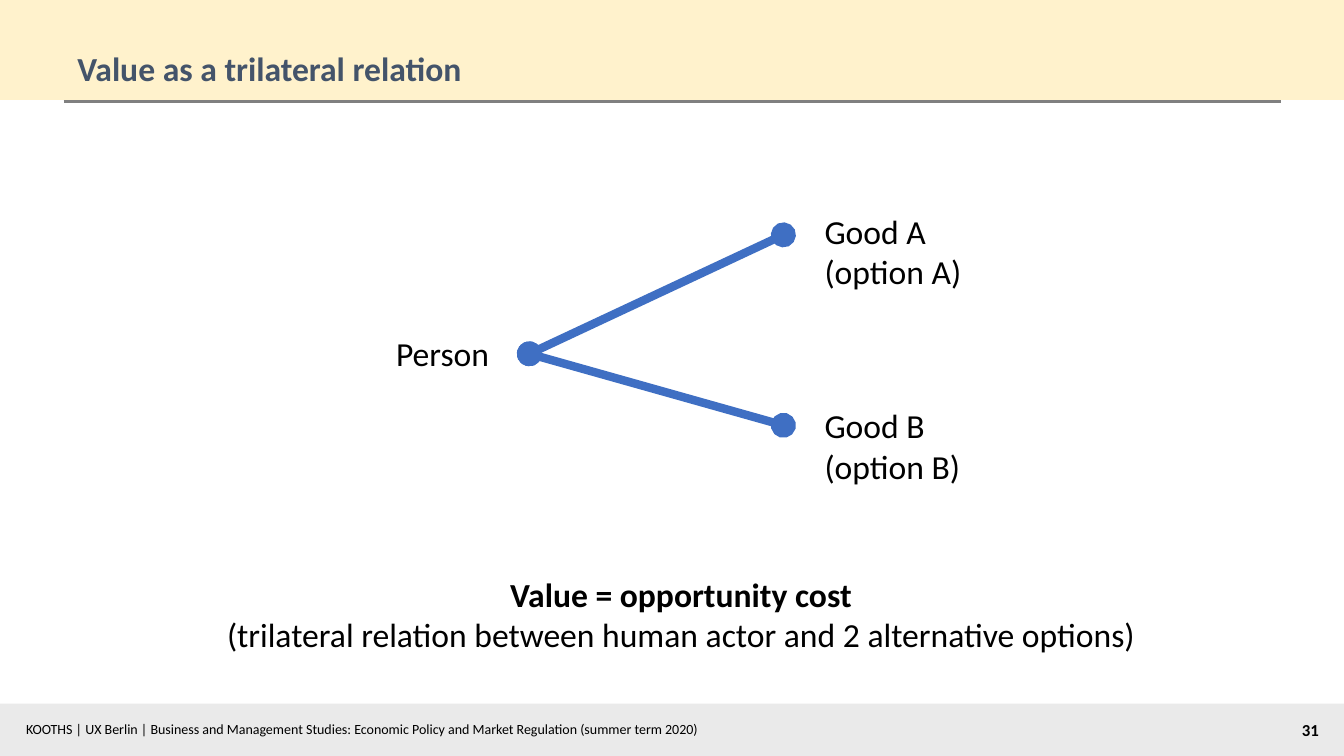
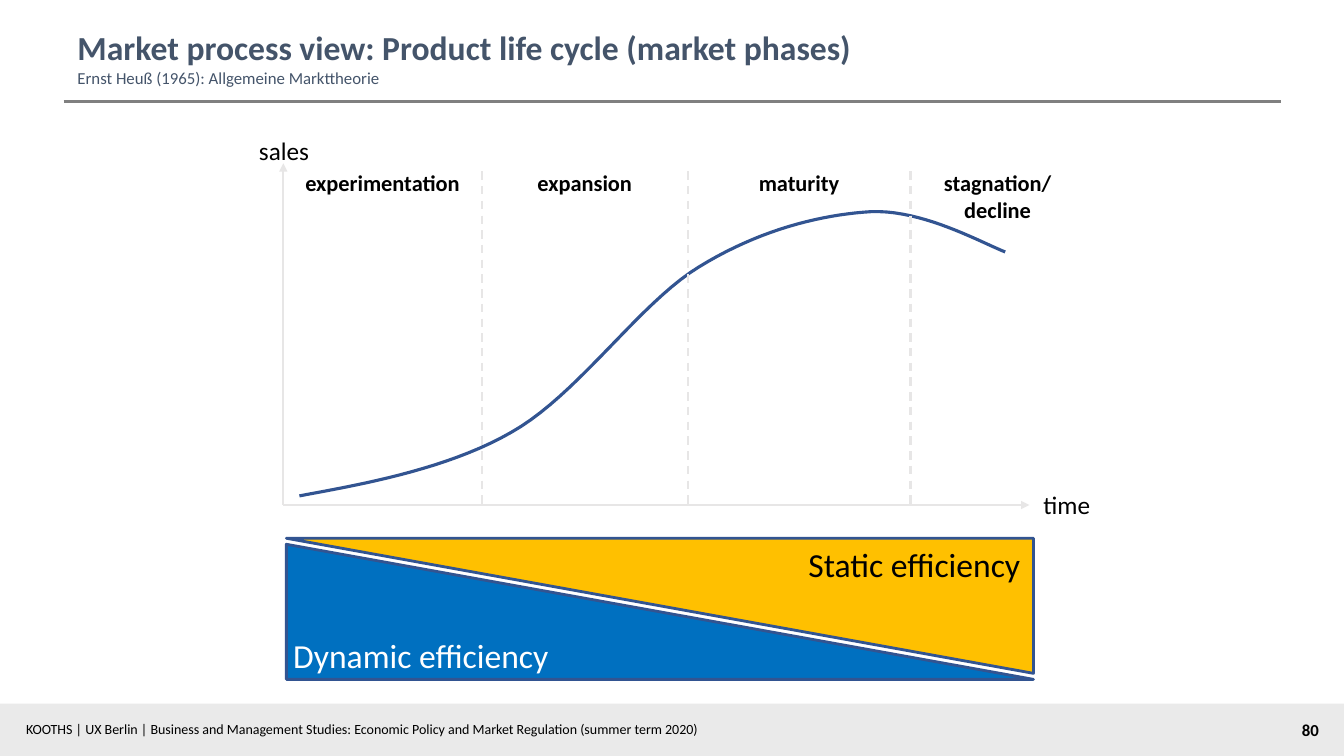
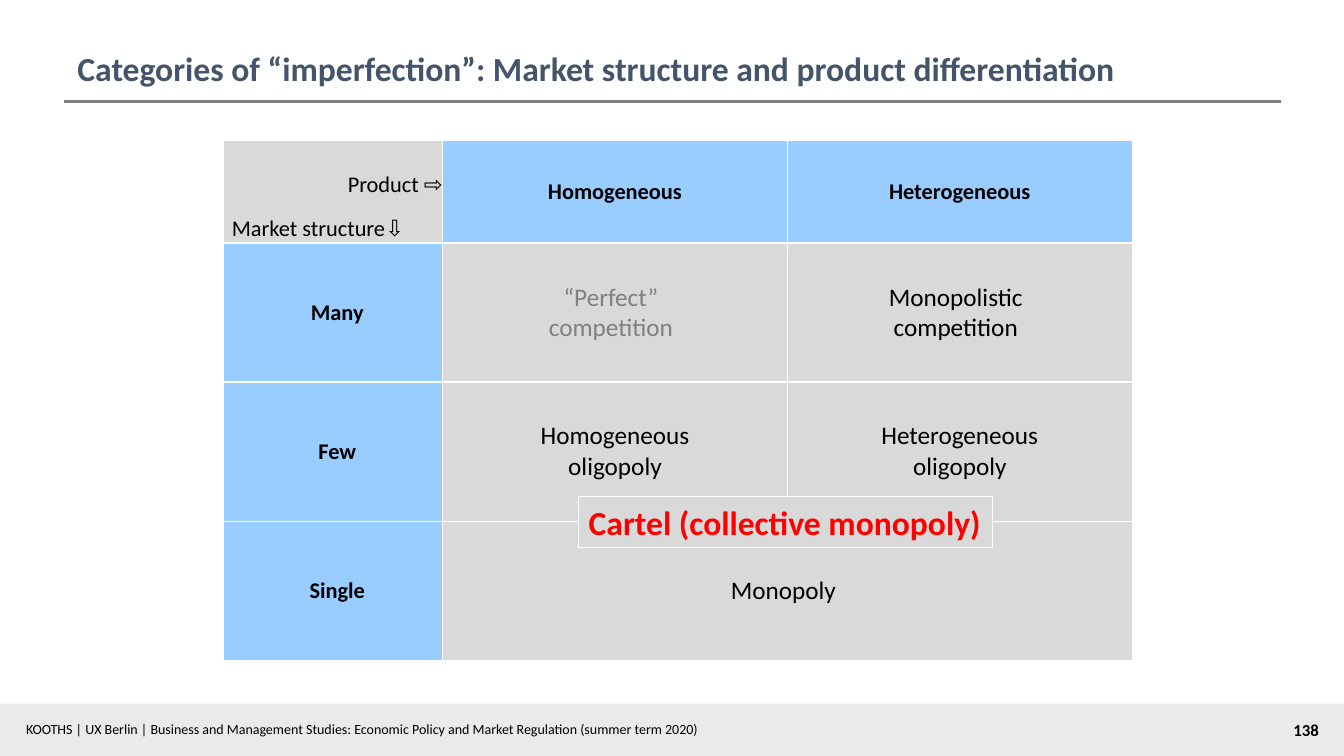
from itertools import pairwise

from lxml.etree import SubElement
from pptx import Presentation
from pptx.dml.color import RGBColor
from pptx.enum.dml import MSO_LINE
from pptx.enum.shapes import MSO_CONNECTOR, MSO_SHAPE
from pptx.enum.text import MSO_ANCHOR, PP_ALIGN
from pptx.oxml.ns import qn
from pptx.util import Inches, Pt

FONT = "Calibri"
COLORS = {
    "text": "000000", "white": "FFFFFF", "title": "44546A", "rule": "808080",
    "footer": "EAEAEA", "band": "FFF2CC", "relation": "3F6FC3", "axis": "E7E6E6",
    "curve": "325491", "dynamic": "0070C0", "static": "FFC000",
    "head": "99CCFF", "body": "D9D9D9", "muted": "808080", "alert": "FF0000",
}
LEFT, CENTER, RIGHT = PP_ALIGN.LEFT, PP_ALIGN.CENTER, PP_ALIGN.RIGHT
WIDTH, HEIGHT = 13.33, 7.5
FOOTER = ("KOOTHS | UX Berlin | Business and Management Studies: "
          "Economic Policy and Market Regulation (summer term 2020)")

# Trilateral relation
PERSON = (5.25, 3.51)
GOODS = [(7.77, 2.33), (7.77, 4.22)]
RELATION_LABELS = [
    ("Person", (3.83, 3.25, 1.13, 0.5)),
    ("Good A\n(option A)", (8.08, 2.04, 1.57, 0.91)),
    ("Good B\n(option B)", (8.08, 3.97, 1.56, 0.91)),
]
VALUE_RUNS = [
    ("Value = opportunity cost\n", {"bold": True}),
    ("(trilateral relation between human actor and 2 alternative options)", {}),
]

# Product life cycle
ORIGIN, TIME_END, SALES_END = (2.81, 5.01), (10.21, 5.01), (2.81, 1.62)
PHASES = ["experimentation", "expansion", "maturity", "stagnation/\ndecline"]
PHASE_EDGES = [2.81, 4.78, 6.82, 9.03, 10.76]
CURVE_START = (2.97, 4.92)
CURVE = [  # two control points and an end point for each Bézier segment
    ((3.5, 4.82), (4.41, 4.67), (5.07, 4.29)),
    ((5.73, 3.92), (6.34, 3.01), (6.93, 2.65)),
    ((7.53, 2.28), (8.14, 2.13), (8.64, 2.1)),
    ((9.15, 2.08), (9.72, 2.4), (9.97, 2.5)),
]
AXIS_LABELS = [("time", (10.25, 4.81, 0.68, 0.4)), ("sales", (2.47, 1.29, 0.7, 0.4))]
EFFICIENCIES = [  # fill, top, rotation
    ("dynamic", 5.4, 0),
    ("static", 5.34, 180),
]
EFFICIENCY_LABELS = [
    ("Static efficiency", "text", (7.92, 5.35, 2.33, 0.5)),
    ("Dynamic efficiency", "white", (2.81, 6.25, 2.77, 0.5)),
]

# Market structure
MARKETS = [
    ["", "Homogeneous", "Heterogeneous"],
    ["Many", "“Perfect”\ncompetition", "Monopolistic\ncompetition"],
    ["Few", "Homogeneous\noligopoly", "Heterogeneous\noligopoly"],
    ["Single", "Monopoly", ""],
]
COLUMN_WIDTHS = [2.17, 3.42, 3.42]
ROW_HEIGHTS = [1.02, 1.38, 1.38, 1.38]


def rgb(name):
    return RGBColor.from_string(COLORS[name])


def inches(values):
    return [Inches(value) for value in values]


def write(para, runs, size=18, color="text", bold=False, align=LEFT):
    """Fill a paragraph with text or (text, format) runs; a newline is a line break."""
    para.alignment = align
    for text, changes in [(runs, {})] if isinstance(runs, str) else runs:
        style = {"name": FONT, "size": Pt(size), "bold": bold} | changes
        for number, line in enumerate(text.split("\n")):
            if number:
                para.add_line_break()
            if line:
                span = para.add_run()
                span.text = line
                span.font.color.rgb = rgb(color)
                for key, value in style.items():
                    setattr(span.font, key, value)


def add_text(page, place, runs, wrap=False, anchor=MSO_ANCHOR.TOP, **style):
    box = page.shapes.add_textbox(*inches(place))
    box.text_frame.word_wrap = wrap
    box.text_frame.vertical_anchor = anchor
    write(box.text_frame.paragraphs[0], runs, **style)


def add_block(page, place, fill, kind=MSO_SHAPE.RECTANGLE, line=None, weight=1):
    block = page.shapes.add_shape(kind, *inches(place))
    block.shadow.inherit = False
    block.fill.solid()
    block.fill.fore_color.rgb = rgb(fill)
    if line:
        block.line.color.rgb = rgb(line)
        block.line.width = Pt(weight)
    else:
        block.line.fill.background()
    return block


def add_line(page, start, end, color, weight, dash=None, head=None, tail=None):
    line = page.shapes.add_connector(MSO_CONNECTOR.STRAIGHT, *inches(start + end))
    line.line.color.rgb = rgb(color)
    line.line.width = Pt(weight)
    if dash:
        line.line.dash_style = dash
    outline = line.line._get_or_add_ln()
    for tag, mark in (("a:headEnd", head), ("a:tailEnd", tail)):
        if mark:
            SubElement(outline, qn(tag), type=mark)
    SubElement(line._element.spPr, qn("a:effectLst"))


def add_page(deck, number, title, band=False):
    """Add a slide with the shared footer, title rule and title."""
    page = deck.slides.add_slide(deck.slide_layouts[6])
    add_block(page, (0, 6.98, WIDTH, 0.52), "footer")
    add_text(page, (0.16, 7.1, 10.17, 0.27), FOOTER, wrap=True, size=10)
    add_line(page, (0.63, 1.01), (12.71, 1.01), "rule", 2.25)
    add_text(page, (11.08, 7.09, 2.1, 0.3), str(number), wrap=True,
             size=12, bold=True, align=RIGHT)
    if band:
        add_block(page, (0, 0, WIDTH, 0.99), "band")
    add_text(page, (0.67, 0.21, 12, 0.71), title, wrap=True,
             anchor=MSO_ANCHOR.BOTTOM, size=24, color="title", bold=True)
    return page


def relation_page(deck):
    page = add_page(deck, 31, "Value as a trilateral relation", band=True)
    add_text(page, (0.84, 5.64, 11.83, 1.26), VALUE_RUNS, wrap=True,
             size=24, align=CENTER)
    for good in GOODS:
        add_line(page, PERSON, good, "relation", 6, head="oval", tail="oval")
    for text, place in RELATION_LABELS:
        add_text(page, place, text, size=24)


def curve_points(steps=20):
    """Sample the Bézier segments of the sales curve."""
    points, start = [], CURVE_START
    for first, second, end in CURVE:
        for step in range(1, steps + 1):
            t = step / steps
            weights = ((1 - t) ** 3, 3 * t * (1 - t) ** 2, 3 * t * t * (1 - t), t ** 3)
            points.append(inches(
                sum(weight * value for weight, value in zip(weights, values))
                for values in zip(start, first, second, end)))
        start = end
    return points


def life_cycle_page(deck):
    page = add_page(deck, 80, [
        ("Market process view: Product life cycle (market phases)\n", {}),
        ("Ernst Heuß (1965): Allgemeine Markttheorie", {"size": Pt(12), "bold": False}),
    ])
    for end in (TIME_END, SALES_END):
        add_line(page, ORIGIN, end, "axis", 1.5, tail="triangle")

    builder = page.shapes.build_freeform(*inches(CURVE_START))
    builder.add_line_segments(curve_points(), close=False)
    curve = builder.convert_to_shape()
    curve.shadow.inherit = False
    curve.fill.background()
    curve.line.color.rgb = rgb("curve")
    curve.line.width = Pt(2.25)

    for text, place in AXIS_LABELS:
        add_text(page, place, text)
    for edge in PHASE_EDGES[1:-1]:
        add_line(page, (edge, 1.7), (edge, ORIGIN[1]), "axis", 1.5, dash=MSO_LINE.DASH)
    for phase, (left, right) in zip(PHASES, pairwise(PHASE_EDGES)):
        height = 0.71 if "\n" in phase else 0.4
        add_text(page, (left, 1.63, right - left, height), phase,
                 size=16, bold=True, align=CENTER)

    for fill, top, rotation in EFFICIENCIES:
        wedge = add_block(page, (2.84, top, 7.41, 1.34), fill,
                          MSO_SHAPE.ISOSCELES_TRIANGLE, "curve", 2)
        wedge.adjustments[0] = 0
        wedge.rotation = rotation
    for text, color, place in EFFICIENCY_LABELS:
        add_text(page, place, text, size=24, color=color)


def format_cell(cell, fill, insets, anchor=MSO_ANCHOR.MIDDLE):
    properties = cell._tc.get_or_add_tcPr()
    for side in "LRTB":
        border = SubElement(properties, qn(f"a:ln{side}"), w=str(Pt(1)))
        paint = SubElement(border, qn("a:solidFill"))
        SubElement(paint, qn("a:srgbClr"), val=COLORS["white"])
    cell.fill.solid()
    cell.fill.fore_color.rgb = rgb(fill)
    cell.vertical_anchor = anchor
    for side, inset in zip(("left", "top", "right", "bottom"), insets):
        setattr(cell, f"margin_{side}", Inches(inset))


def market_page(deck):
    page = add_page(deck, 138, "Categories of “imperfection”: "
                    "Market structure and product differentiation")
    place = (2.22, 1.39, sum(COLUMN_WIDTHS), sum(ROW_HEIGHTS))
    table = page.shapes.add_table(len(MARKETS), len(COLUMN_WIDTHS), *inches(place)).table
    table.first_row = table.horz_banding = False
    for column, width in zip(table.columns, COLUMN_WIDTHS):
        column.width = Inches(width)
    for row, height in zip(table.rows, ROW_HEIGHTS):
        row.height = Inches(height)
    table.cell(3, 1).merge(table.cell(3, 2))

    for row, texts in enumerate(MARKETS):
        for column, text in enumerate(texts):
            cell = table.cell(row, column)
            if row == column == 0:
                format_cell(cell, "body", (0.08, 0, 0, 0), MSO_ANCHOR.BOTTOM)
                product = cell.text_frame.paragraphs[0]
                product.space_before, product.space_after = Pt(6), Pt(12)
                write(product, "Product ⇨", size=16, align=RIGHT)
                write(cell.text_frame.add_paragraph(), "Market structure⇩", size=16)
                continue
            heading = row == 0 or column == 0
            if heading:
                insets = (0 if column else 0.08, 0, 0, 0)
            else:
                insets = (0, 0, 0, 0) if row == 2 else (0.01, 0.01, 0.09, 0)
            format_cell(cell, "head" if heading else "body", insets)
            if text:
                write(cell.text_frame.paragraphs[0], text, size=16 if heading else 18,
                      color="muted" if (row, column) == (1, 1) else "text",
                      bold=heading, align=CENTER)

    cartel = add_block(page, (5.74, 4.93, 4.1, 0.5), "body", line="white", weight=0.75)
    write(cartel.text_frame.paragraphs[0], "Cartel (collective monopoly)",
          size=24, color="alert", bold=True)


def main():
    deck = Presentation()
    deck.slide_width, deck.slide_height = inches((WIDTH, HEIGHT))
    for build in (relation_page, life_cycle_page, market_page):
        build(deck)
    deck.save("out.pptx")


if __name__ == "__main__":
    main()
